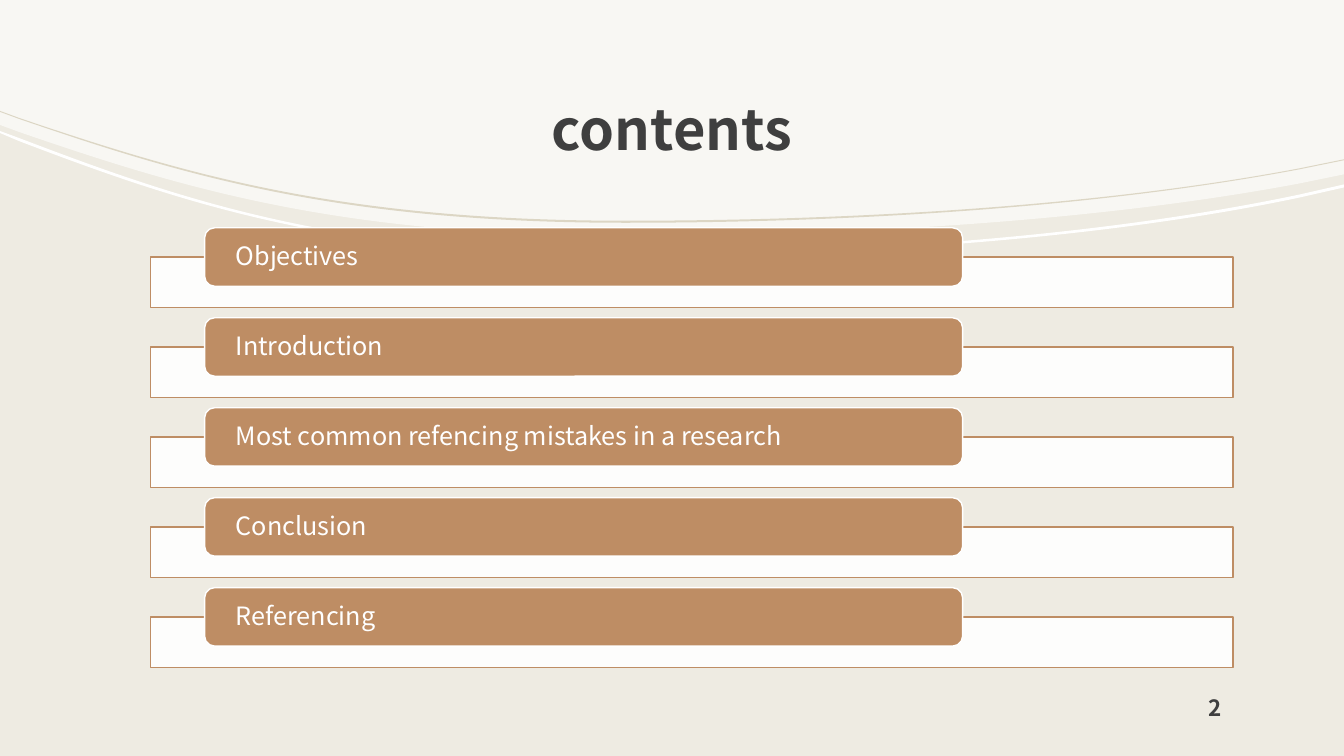
from lxml.etree import SubElement
from pptx import Presentation
from pptx.dml.color import RGBColor
from pptx.enum.shapes import MSO_SHAPE
from pptx.enum.text import MSO_ANCHOR, MSO_AUTO_SIZE, PP_ALIGN
from pptx.oxml.ns import qn
from pptx.util import Pt

SCALE = 9144  # EMU per px, 100 px to the inch
WIDTH, HEIGHT = 1333, 750
FONT = "Noto Sans CJK JP"
COLORS = {"ground": "EEEBE2", "white": "FFFFFF", "tan": "DCD6C4",
          "bar": "BE8D64", "ink": "3F3F3F"}
TOPICS = ["Objectives", "Introduction",
          "Most common refencing mistakes in a research",
          "Conclusion", "Referencing"]

# Heights of each curve at the shared x positions; two cubic arcs in the middle
ARC_X = (0, 19, 179, 333, 620, 875, 1109, 1289, WIDTH)
SHADE = (124, 131, 186, 234, 234, 234, 216, 182, 173)
WHITE_TOP = (130, 137, 198, 252, 252, 252, 231, 193, 183)
WHITE_LOW = (132, 140, 201, 254, 254, 254, 234, 196, 186)
TAN_TOP = (110, 117, 171, 219, 219, 219, 201, 167, 158)
TAN_LOW = (111, 118, 173, 221, 221, 221, 202, 168, 159)

TITLE = {"size": 40, "bold": True, "color": "ink", "spacing": 1.3,
         "frame": {"vertical_anchor": MSO_ANCHOR.MIDDLE},
         "align": PP_ALIGN.CENTER, "inset": (12, 12, 12, 10)}
TOPIC = {"size": 18, "bold": False, "color": "white", "spacing": 0.9,
         "frame": {"vertical_anchor": MSO_ANCHOR.MIDDLE},
         "align": PP_ALIGN.LEFT, "inset": (28, 0, 28, 0)}
NUMBER = {"size": 16, "bold": True, "color": "ink", "spacing": 1.0,
          "frame": {"vertical_anchor": MSO_ANCHOR.BOTTOM},
          "align": PP_ALIGN.LEFT, "inset": (12, 12, 12, 10)}


def px(*sizes):
    return [round(size * SCALE) for size in sizes]


def rgb(name):
    return RGBColor.from_string(COLORS[name])


def assign(item, values):
    for name, value in values.items():
        setattr(item, name, value)


def paint(shape, fill, line=None, alpha=100):
    """Fill and outline a shape, with opacity in percent."""
    shape.shadow.inherit = False
    shape.fill.solid()
    shape.fill.fore_color.rgb = rgb(fill)
    if alpha < 100:
        tint = shape.fill._xPr.find(qn("a:solidFill"))[0]
        SubElement(tint, qn("a:alpha"), val=str(alpha * 1000))
    if line:
        shape.line.color.rgb = rgb(line)
        shape.line.width = Pt(1)
    else:
        shape.line.fill.background()


def write(shape, text, style):
    frame = shape.text_frame
    assign(frame, {"word_wrap": True, "auto_size": MSO_AUTO_SIZE.NONE})
    assign(frame, style["frame"])
    sides = ("margin_left", "margin_top", "margin_right", "margin_bottom")
    assign(frame, dict(zip(sides, px(*style["inset"]))))
    para = frame.paragraphs[0]
    assign(para, {"alignment": style["align"], "line_spacing": style["spacing"]})
    run = para.add_run()
    run.text = text
    assign(run.font, {"name": FONT, "size": Pt(style["size"]),
                      "bold": style["bold"]})
    run.font.color.rgb = rgb(style["color"])


def arc(heights):
    return list(zip(ARC_X, heights))


def bend(shape, starts):
    """Turn three straight segments from each start into one cubic arc."""
    lines = list(shape._element.iter(qn("a:lnTo")))
    for start in starts:
        first, *rest = lines[start:start + 3]
        curve = first.makeelement(qn("a:cubicBezTo"))
        first.addprevious(curve)
        for line in (first, *rest):
            curve.append(line[0])
            line.getparent().remove(line)


def band(slide, upper, lower, color, alpha=100):
    """Fill the area above a lower arc, up to a straight or curved edge."""
    points = [px(*point) for point in upper + lower[::-1]]
    form = slide.shapes.build_freeform(*points[0])
    form.add_line_segments(points[1:])
    shape = form.convert_to_shape()
    count = len(upper)
    curved = [1, 4] if count == len(ARC_X) else []
    bend(shape, [*curved, count + 1, count + 4])
    paint(shape, color, alpha=alpha)


def waves(slide):
    band(slide, [(0, 0), (WIDTH, 0)], arc(SHADE), "white", 60)
    band(slide, arc(WHITE_TOP), arc(WHITE_LOW), "white")
    band(slide, arc(TAN_TOP), arc(TAN_LOW), "tan")


def heading(slide, box, text):
    title = slide.shapes.title
    slide.shapes._spTree.append(title._element)  # bring in front of the waves
    assign(title, dict(zip(("left", "top", "width", "height"), px(*box))))
    write(title, text, TITLE)


def row(slide, box, text):
    left, top, width, height = box
    panel = slide.shapes.add_shape(
        MSO_SHAPE.RECTANGLE, *px(left, top + 29, width, height - 29))
    paint(panel, "white", "bar", 90)
    bar = slide.shapes.add_shape(
        MSO_SHAPE.ROUNDED_RECTANGLE, *px(left + 54, top, width * 0.7, 58))
    bar.adjustments[0] = 0.17
    paint(bar, "bar", "white")
    write(bar, text, TOPIC)


def agenda(slide, box, topics):
    left, top, width, height = box
    tall = 79
    pitch = (height - tall) / (len(topics) - 1)
    for i, topic in enumerate(topics):
        row(slide, (left, top + i * pitch, width, tall), topic)


def number(slide, box, text):
    write(slide.shapes.add_textbox(*px(*box)), text, NUMBER)


def main():
    deck = Presentation()
    deck.slide_width, deck.slide_height = px(WIDTH, HEIGHT)
    slide = deck.slides.add_slide(deck.slide_layouts[5])
    slide.background.fill.solid()
    slide.background.fill.fore_color.rgb = rgb("ground")
    waves(slide)
    heading(slide, (133, 59, 1067, 114), "contents")
    agenda(slide, (149, 226, 1074, 436), TOPICS)
    number(slide, (1187, 675, 130, 50), "2")
    deck.save("out.pptx")


if __name__ == "__main__":
    main()
